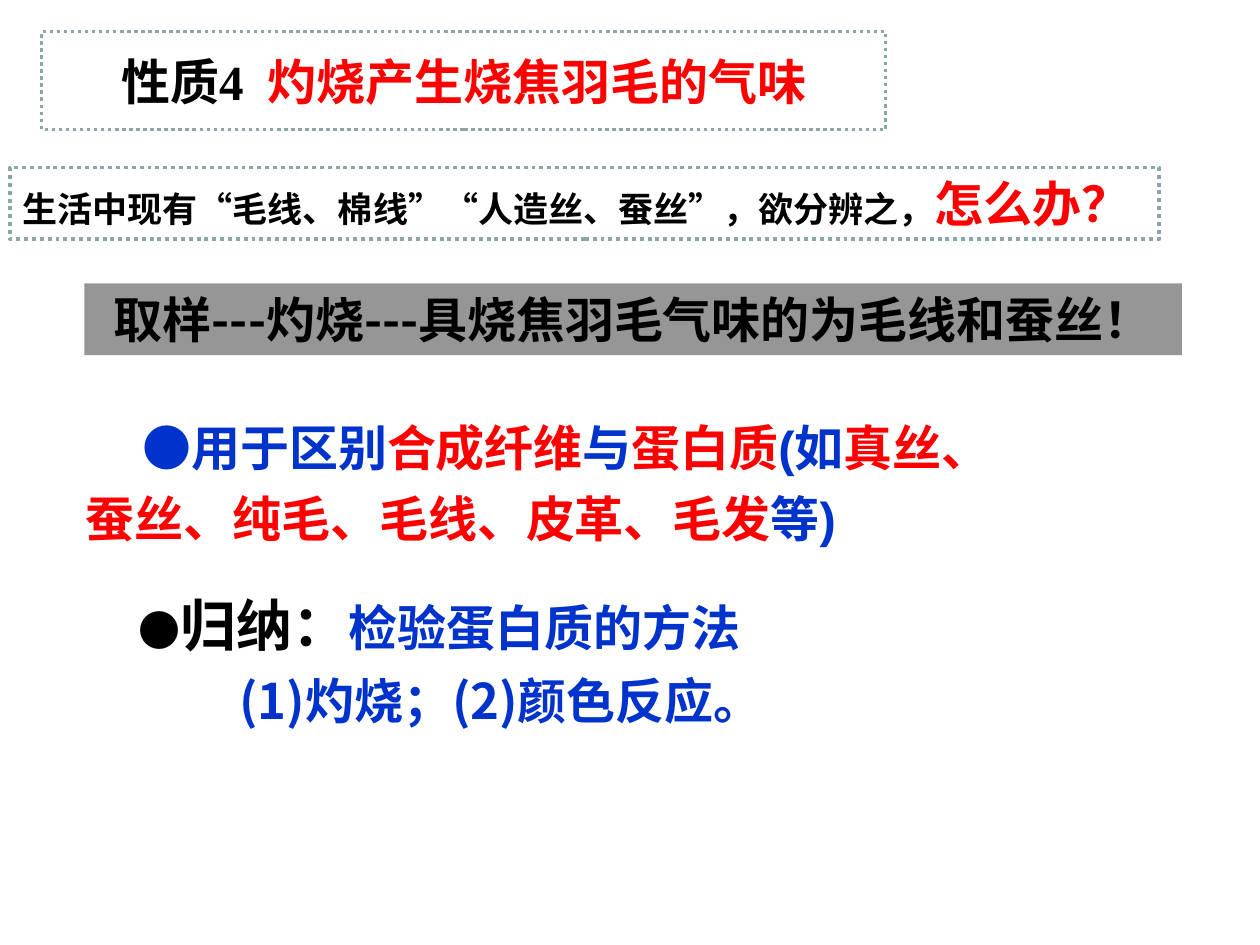
from lxml.etree import SubElement
from pptx import Presentation
from pptx.dml.color import RGBColor
from pptx.enum.dml import MSO_LINE
from pptx.enum.shapes import MSO_SHAPE as SHAPE
from pptx.enum.text import MSO_ANCHOR as ANCHOR, MSO_AUTO_SIZE as AUTO, PP_ALIGN as ALIGN
from pptx.oxml.ns import qn
from pptx.util import Inches, Pt

BLACK = RGBColor(0x00, 0x00, 0x00)
RED = RGBColor(0xFF, 0x00, 0x00)
BLUE = RGBColor(0x00, 0x33, 0xCC)
TEAL = RGBColor(0x8A, 0xA6, 0xA8)
GRAY = RGBColor(0x73, 0x73, 0x73)
CJK = "Noto Sans CJK SC"


def add_run(p, text, size=28, color=BLACK, font=CJK):
    r = p.add_run()
    r.text = text
    r.font.size = Pt(size)
    r.font.bold = True
    r.font.color.rgb = color
    r.font.name = font
    SubElement(r._r.get_or_add_rPr(), qn("a:ea"), typeface=CJK)


def write(sp, paragraphs, font=CJK, align=ALIGN.LEFT, anchor=ANCHOR.TOP,
          spacing=1.0, before=0, indents=(0,)):
    tf = sp.text_frame
    tf.word_wrap = True
    tf.auto_size = AUTO.NONE
    tf.vertical_anchor = anchor
    for i, (runs, indent) in enumerate(zip(paragraphs, indents)):
        p = tf.add_paragraph() if i else tf.paragraphs[0]
        p.alignment = align
        p.line_spacing = spacing
        p.space_before = Pt(before)
        pPr = p._p.get_or_add_pPr()
        pPr.set("marL", "0")
        pPr.set("indent", str(Inches(indent)))
        SubElement(pPr, qn("a:buNone"))
        for text, fmt in runs:
            add_run(p, text, font=font, **fmt)


def place(sp, left, top, width, height):
    sp.left, sp.top = Inches(left), Inches(top)
    sp.width, sp.height = Inches(width), Inches(height)
    return sp


def dotted_line(sp, width):
    sp.line.color.rgb = TEAL
    sp.line.width = Pt(width)
    sp.line.dash_style = MSO_LINE.ROUND_DOT


def add_box(s, *at):
    sp = s.shapes.add_shape(SHAPE.RECTANGLE, *map(Inches, at))
    sp.shadow.inherit = False
    sp.fill.background()
    sp.line.fill.background()
    return sp


def fill_translucent(sp, color, percent):
    sp.fill.solid()
    sp.fill.fore_color.rgb = color
    clr = sp._element.spPr.find(".//" + qn("a:srgbClr"))
    SubElement(clr, qn("a:alpha"), val=str(percent * 1000))


def shape_title(sp):
    geom = SubElement(sp._element.spPr, qn("a:prstGeom"), prst="flowChartTerminator")
    SubElement(geom, qn("a:avLst"))
    dotted_line(sp, 2)


def main():
    prs = Presentation()
    prs.slide_width, prs.slide_height = Inches(10), Inches(7.5)
    s = prs.slides.add_slide(prs.slide_layouts[3])
    for sp in list(s.placeholders)[3:]:
        sp._element.getparent().remove(sp._element)
    title, usage, summary = s.placeholders
    red, blue = {"color": RED}, {"color": BLUE}

    place(title, 0.33, 0.25, 6.7, 0.78)
    shape_title(title)
    write(title, [[("性质4  ", {}), ("灼烧产生烧焦羽毛的气味", red)]],
          font="Times New Roman", align=ALIGN.CENTER, anchor=ANCHOR.MIDDLE)

    question = add_box(s, 0.08, 1.33, 9.12, 0.57)
    dotted_line(question, 2.25)
    write(question, [[("生活中现有“毛线、棉线”“人造丝、蚕丝”，欲分辨之，", {"size": 20}),
                      ("怎么办？", red)]])

    answer = add_box(s, 0.67, 2.25, 8.71, 0.57)
    fill_translucent(answer, GRAY, 75)
    write(answer, [[("取样---灼烧---具烧焦羽毛气味的为毛线和蚕丝！", {})]], align=ALIGN.CENTER)

    place(usage, 0.58, 3.17, 7.62, 1.23)
    write(usage, [[("●用于区别", blue), ("合成纤维", red), ("与", blue), ("蛋白质", red),
                   ("(如", blue), ("真丝、蚕丝、纯毛、毛线、皮革、毛发", red), ("等)", blue)]],
          font="Arial", spacing=1.2, before=14, indents=(0.45,))

    place(summary, 1, 4.74, 6.67, 1.14)
    write(summary, [[("●", {"size": 24}), ("归纳：", {"size": 32}), ("检验蛋白质的方法", blue)],
                    [("(1)灼烧；(2)颜色反应。", blue)]],
          spacing=0.8, before=14, indents=(0, 0.8))

    prs.save("out.pptx")


if __name__ == "__main__":
    main()
